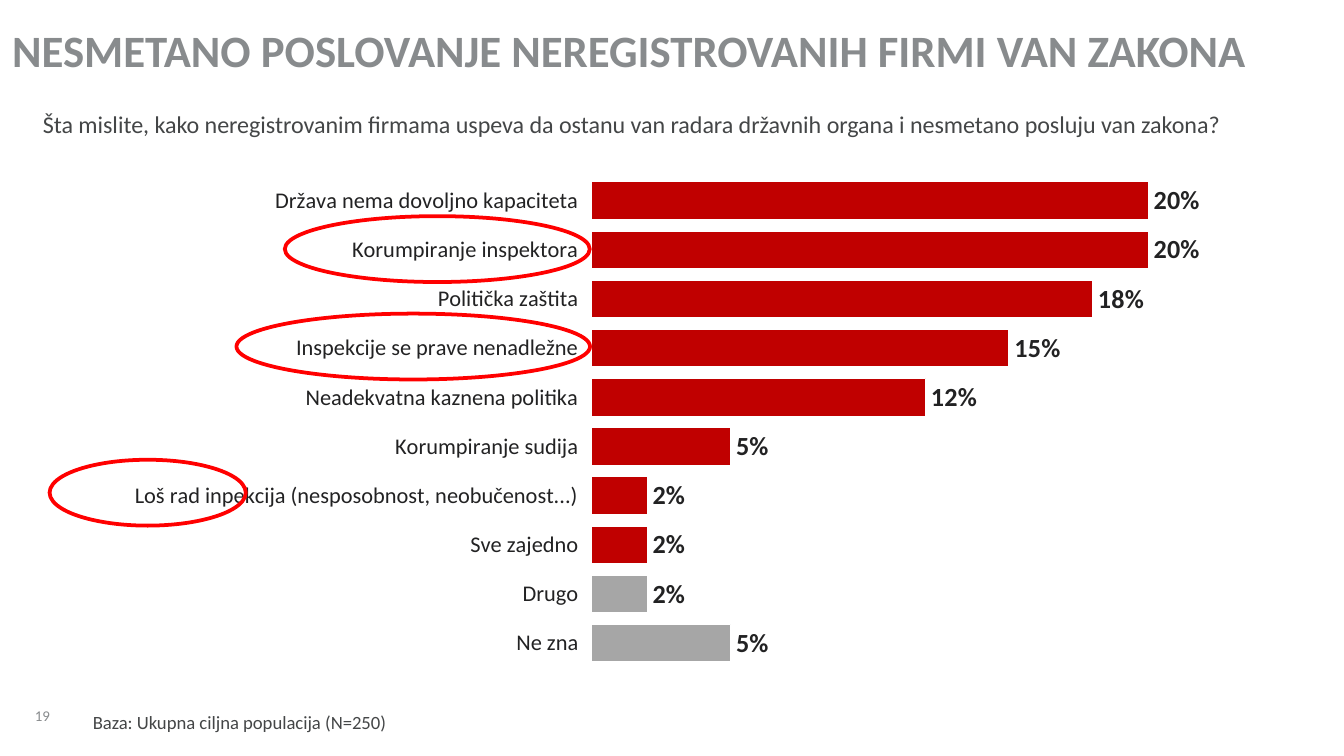
import pptx
import pptx.chart.data
import pptx.dml.color
import pptx.enum.chart
import pptx.enum.shapes
import pptx.enum.text
import pptx.oxml
import pptx.oxml.ns
import pptx.util

Pt = pptx.util.Pt
ANCHOR = pptx.enum.text.MSO_ANCHOR
FONT = "Calibri"
COLORS = {
    "heading": "888B8D",
    "body": "444647",
    "chart_text": "222223",
    "answer": "C00000",
    "other": "A6A6A6",
    "edge": "FFFFFF",
    "highlight": "FF0000",
}

ANSWERS = [
    ("Država nema dovoljno kapaciteta", 20),
    ("Korumpiranje inspektora", 20),
    ("Politička zaštita", 18),
    ("Inspekcije se prave nenadležne", 15),
    ("Neadekvatna kaznena politika", 12),
    ("Korumpiranje sudija", 5),
    ("Loš rad inpekcija (nesposobnost, neobučenost...)", 2),
    ("Sve zajedno", 2),
    ("Drugo", 2),
    ("Ne zna", 5),
]
OTHER_ROWS = (8, 9)
# Row of the highlighted answer, left edge and width of its ellipse
HIGHLIGHTS = [(1, 152.6, 163.4), (3, 126.7, 189.4), (6, 26.6, 105.1)]
ROW_PITCH = 26.1
ELLIPSE_HEIGHT = 35.3


def rgb(name):
    return pptx.dml.color.RGBColor.from_string(COLORS[name])


def format_font(font, size, color, bold=False):
    font.name = FONT
    font.size = Pt(size)
    font.bold = bold
    font.color.rgb = rgb(color)


def place(shape, box):
    shape.left, shape.top, shape.width, shape.height = map(Pt, box)


def write_line(shape, text, size, color, anchor, bold=False, wrap=True, spacing=1.0):
    frame = shape.text_frame
    frame.auto_size = pptx.enum.text.MSO_AUTO_SIZE.NONE
    frame.word_wrap = wrap
    frame.vertical_anchor = anchor
    frame.margin_left = frame.margin_right = frame.margin_top = frame.margin_bottom = 0
    line = frame.paragraphs[0]
    line.alignment = pptx.enum.text.PP_ALIGN.LEFT
    line.line_spacing = spacing
    line.space_before = Pt(0)
    run = line.add_run()
    run.text = text
    format_font(run.font, size, color, bold)


def add_title(slide, box):
    title = slide.shapes.title
    place(title, box)
    write_line(title, "NESMETANO POSLOVANJE NEREGISTROVANIH FIRMI VAN ZAKONA",
               24, "heading", ANCHOR.BOTTOM, bold=True)


def add_note(slide, box, text, size, color, anchor, **options):
    note = slide.shapes.add_textbox(*map(Pt, box))
    write_line(note, text, size, color, anchor, **options)


def set_plot_area(chart, x, y, width, height):
    plot_area = chart._chartSpace.chart.plotArea
    for old in plot_area.findall(pptx.oxml.ns.qn("c:layout")):
        plot_area.remove(old)
    plot_area.insert(0, pptx.oxml.parse_xml(
        f'<c:layout {pptx.oxml.ns.nsdecls("c")}><c:manualLayout>'
        '<c:layoutTarget val="inner"/><c:xMode val="edge"/><c:yMode val="edge"/>'
        f'<c:x val="{x}"/><c:y val="{y}"/><c:w val="{width}"/><c:h val="{height}"/>'
        '</c:manualLayout></c:layout>'))


def add_answers_chart(slide, box):
    data = pptx.chart.data.CategoryChartData()
    data.categories = [answer for answer, _ in ANSWERS]
    data.add_series("Series 1", [share for _, share in ANSWERS])
    chart = slide.shapes.add_chart(
        pptx.enum.chart.XL_CHART_TYPE.BAR_CLUSTERED, *map(Pt, box), data).chart
    chart.has_title = False
    chart.has_legend = False
    format_font(chart.font, 18, "chart_text")
    set_plot_area(chart, 0.445, 0, 0.555, 1)

    # Axes
    answers_axis = chart.category_axis
    answers_axis.reverse_order = True
    answers_axis.has_major_gridlines = False
    answers_axis.format.line.fill.background()
    format_font(answers_axis.tick_labels.font, 12, "chart_text")
    share_axis = chart.value_axis
    share_axis.minimum_scale = 0
    share_axis.maximum_scale = 25
    share_axis.has_major_gridlines = False
    share_axis.visible = False

    # Bars
    plot = chart.plots[0]
    plot.gap_width = 30
    plot.vary_by_categories = False
    shares = plot.series[0]
    shares.invert_if_negative = False
    bar_formats = [(shares.format, "answer")]
    bar_formats += [(shares.points[row].format, "other") for row in OTHER_ROWS]
    for bar, color in bar_formats:
        bar.fill.solid()
        bar.fill.fore_color.rgb = rgb(color)
        bar.line.color.rgb = rgb("edge")
        bar.line.width = Pt(0.75)

    # Percentages
    labels = shares.data_labels
    labels.show_value = True
    labels.position = pptx.enum.chart.XL_LABEL_POSITION.OUTSIDE_END
    labels.number_format = '#"%"'
    labels.number_format_is_linked = False
    format_font(labels.font, 14, "chart_text", bold=True)


def add_highlights(slide, chart_box):
    chart_top = chart_box[1]
    for row, left, width in HIGHLIGHTS:
        top = chart_top + ROW_PITCH * (row + 0.5) - ELLIPSE_HEIGHT / 2
        ring = slide.shapes.add_shape(
            pptx.enum.shapes.MSO_SHAPE.OVAL,
            *map(Pt, (left, top, width, ELLIPSE_HEIGHT)))
        ring.shadow.inherit = False
        ring.fill.background()
        ring.line.color.rgb = rgb("highlight")
        ring.line.width = Pt(2)


def add_survey_slide(deck):
    slide = deck.slides.add_slide(deck.slide_layouts[5])
    chart_box = (18, 94.3, 671.8, 263.5)

    # Heading and question
    add_title(slide, (6.5, 11.5, 704.9, 29.5))
    add_note(slide, (23, 56.2, 681.8, 22.3),
             "Šta mislite, kako neregistrovanim firmama uspeva da ostanu van radara "
             "državnih organa i nesmetano posluju van zakona?",
             12.9, "body", ANCHOR.MIDDLE, spacing=0.95)

    # Answers
    add_answers_chart(slide, chart_box)
    add_highlights(slide, chart_box)

    # Page number and sample base
    add_note(slide, (18.7, 369.4, 24.5, 18.7), "19", 8, "heading", ANCHOR.BOTTOM,
             wrap=False, spacing=0.85)
    add_note(slide, (49.7, 368.6, 497.5, 24.5), "Baza: Ukupna ciljna populacija (N=250)",
             10, "body", ANCHOR.BOTTOM, spacing=0.95)


def main():
    deck = pptx.Presentation()
    deck.slide_width, deck.slide_height = Pt(720), Pt(405)
    add_survey_slide(deck)
    deck.save("out.pptx")


if __name__ == "__main__":
    main()
